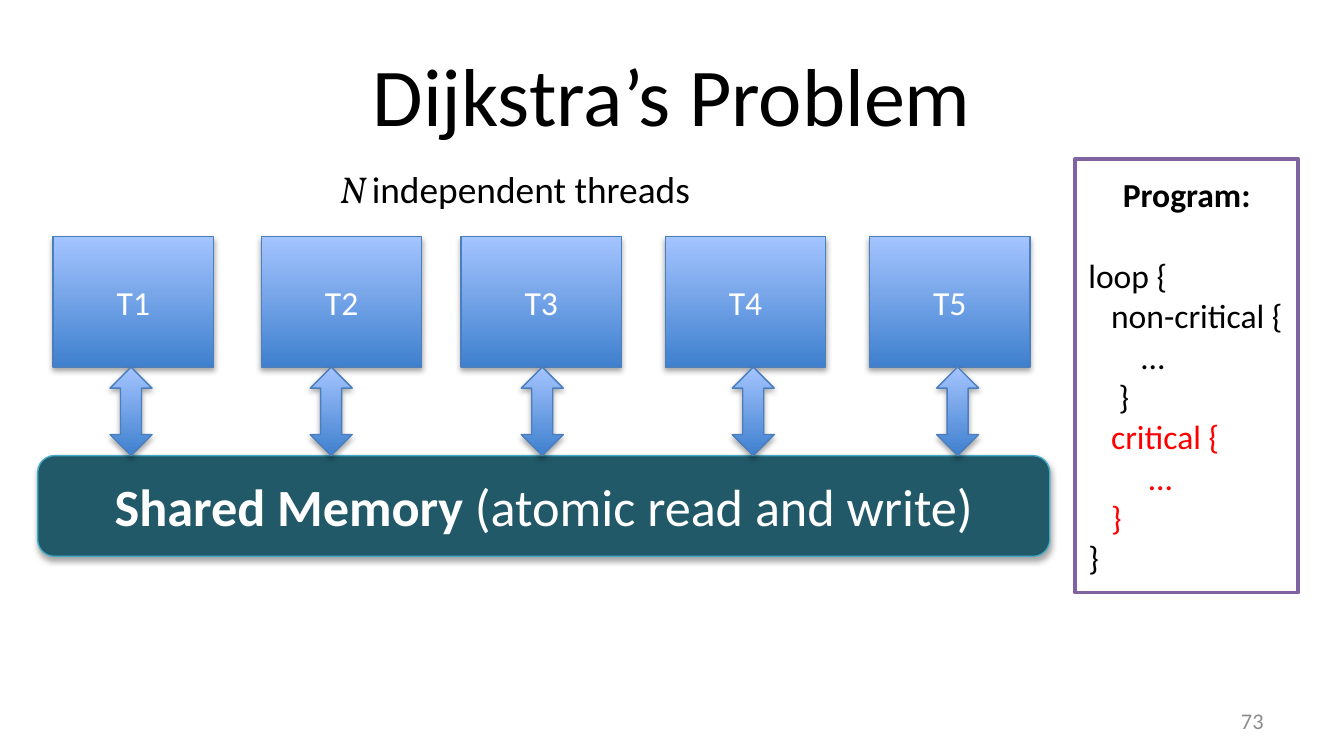
from lxml import etree
from pptx import Presentation
from pptx import util as u
from pptx.dml import color
from pptx.enum import shapes, text
from pptx.oxml import ns

HUES = {
    "black": "000000", "white": "FFFFFF", "grey": "8C8C8C", "red": "FF0000",
    "deep": "3F80CE", "pale": "A4C4FF", "edge": "4B7EBC",
    "teal": "215968", "aqua": "46AAC5", "plum": "8064A2",
}
KIND = shapes.MSO_SHAPE
ALIGN = text.PP_ALIGN


def rgb(name):
    return color.RGBColor.from_string(HUES[name])


class Deck:
    """Holds the style and the current slide; lengths are in points."""

    face = "Calibri"

    def __init__(self, wide, high):
        self.file = Presentation()
        self.file.slide_width, self.file.slide_height = u.Pt(wide), u.Pt(high)
        self.slide = self.file.slides.add_slide(self.file.slide_layouts[6])

    def font(self, item, size, hue, bold=False):
        font = item.font
        font.name, font.size, font.bold = self.face, u.Pt(size), bold
        font.color.rgb = rgb(hue)

    def label(self, shape, line, size, hue, align=ALIGN.CENTER, bold=False):
        """Add one paragraph to the shape, using its empty first one if any."""
        frame = shape.text_frame
        frame.word_wrap = True
        frame.vertical_anchor = text.MSO_ANCHOR.MIDDLE
        para = frame.add_paragraph() if frame.text else frame.paragraphs[0]
        para.alignment = align
        para.add_run().text = line
        self.font(para, size, hue, bold)
        return para

    def box(self, at):
        return self.slide.shapes.add_textbox(*map(u.Pt, at))

    def shape(self, kind, at, edge, fill=None, width=0.75):
        """Add a preset shape; without a fill it gets the blue gradient."""
        shape = self.slide.shapes.add_shape(kind, *map(u.Pt, at))
        if fill:
            shape.fill.solid()
            shape.fill.fore_color.rgb = rgb(fill)
        else:
            shape.fill.gradient()
            shape.fill.gradient_angle = 90
            for stop, hue in zip(shape.fill.gradient_stops, ("deep", "pale")):
                stop.color.rgb = rgb(hue)
        shape.line.color.rgb = rgb(edge)
        shape.line.width = u.Pt(width)
        shape.shadow.inherit = False
        return shape

    def shade(self, shape):
        """Give the shape a soft shadow straight below."""
        glow = shape.element.spPr.find(ns.qn("a:effectLst"))
        drop = etree.SubElement(
            glow, ns.qn("a:outerShdw"), blurRad=str(u.Pt(3.1)),
            dist=str(u.Pt(1.8)), dir="5400000", rotWithShape="0")
        tint = etree.SubElement(drop, ns.qn("a:srgbClr"), val=HUES["black"])
        etree.SubElement(tint, ns.qn("a:alpha"), val="35000")


def main():
    deck = Deck(720, 405)
    deck.label(deck.box((36, 16.5, 648, 67.5)), "Dijkstra’s Problem", 44, "black")
    deck.label(deck.box((516, 375.4, 168, 21.6)), "73", 12, "grey", ALIGN.RIGHT)

    note = deck.box((175, 85, 208.8, 31.5))
    para = deck.label(note, "N ", 20, "black", ALIGN.LEFT)
    note.text_frame.word_wrap = False
    note.text_frame.auto_size = text.MSO_AUTO_SIZE.SHAPE_TO_FIT_TEXT
    sign = para.runs[0].font
    sign.name, sign.italic = "Vollkorn", True
    para.add_run().text = "independent threads"

    bar = deck.shape(KIND.ROUNDED_RECTANGLE, (20.2, 244.1, 542.2, 54), "aqua", "teal")
    deck.shade(bar)
    para = deck.label(bar, "Shared Memory ", 28, "white")
    para.runs[0].font.bold = True
    para.add_run().text = "(atomic read and write)"

    lefts = (28.5, 140, 247, 356.4, 465.8)
    tips = (59, 166.2, 279.3, 392.3, 501.8)
    for num, (left, tip) in enumerate(zip(lefts, tips), 1):
        thread = deck.shape(KIND.RECTANGLE, (left, 126.7, 86, 70), "edge")
        deck.shade(thread)
        deck.label(thread, f"T{num}", 18, "white")
        deck.shade(deck.shape(KIND.UP_DOWN_ARROW, (tip, 196.7, 22.5, 47.4), "edge"))

    code = deck.shape(KIND.RECTANGLE, (576, 85, 119.5, 232.5), "plum", "white", 2)
    head = deck.label(code, "Program:", 18, "black", bold=True)
    head.space_after = u.Pt(22)
    lines = (
        ("loop {", "black"),
        ("   non-critical {", "black"),
        ("       …", "black"),
        ("    }", "black"),
        ("   critical {", "red"),
        ("        …", "red"),
        ("   }", "red"),
        ("}", "black"),
    )
    for line, hue in lines:
        deck.label(code, line, 18, hue, ALIGN.LEFT)

    deck.file.save("out.pptx")


if __name__ == "__main__":
    main()
